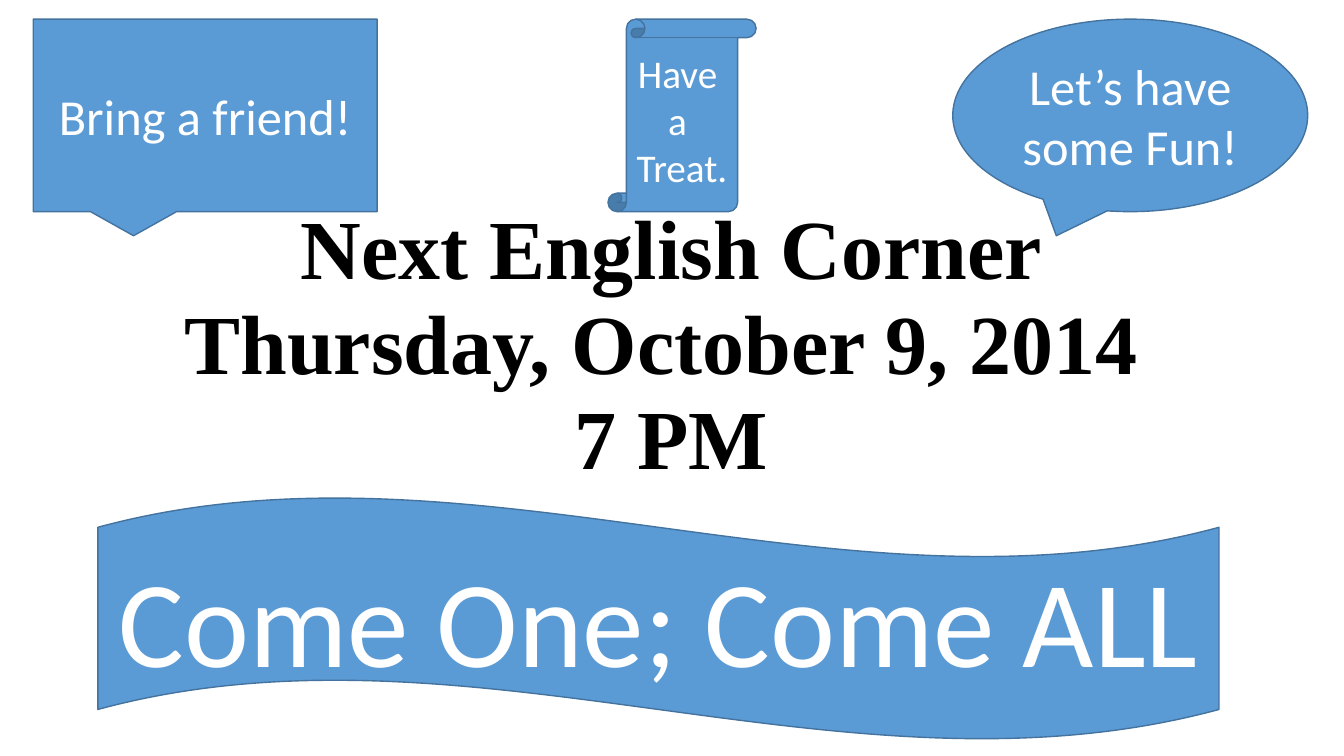
from pptx import Presentation
from pptx.dml.color import RGBColor
from pptx.enum import shapes, text
from pptx.util import Inches, Pt

BLUE = RGBColor(0x5B, 0x9B, 0xD5)
EDGE = RGBColor(0x43, 0x73, 0x9E)
WHITE = RGBColor(0xFF, 0xFF, 0xFF)
BLACK = RGBColor(0, 0, 0)
KIND = shapes.MSO_SHAPE


def write(frame, lines, font, space=1.0):
    """Fill a frame with centred lines in one font format."""
    frame.word_wrap = True
    frame.vertical_anchor = text.MSO_ANCHOR.MIDDLE
    for i, line in enumerate(lines):
        para = frame.paragraphs[0] if i == 0 else frame.add_paragraph()
        para.alignment = text.PP_ALIGN.CENTER
        para.line_spacing = space
        run = para.add_run()
        run.text = line
        run.font.color.rgb = font["color"]
        for key in ("name", "size", "bold"):
            setattr(run.font, key, font[key])


def badge(slide, kind, box, lines, size):
    """Blue shape with white text."""
    shape = slide.shapes.add_shape(kind, *map(Inches, box))
    shape.shadow.inherit = False
    shape.fill.solid()
    shape.fill.fore_color.rgb = BLUE
    shape.line.color.rgb = EDGE
    shape.line.width = Pt(1)
    font = {"name": "Calibri", "size": Pt(size), "bold": False, "color": WHITE}
    write(shape.text_frame, lines, font)


def title(slide, box, lines):
    """Date and time of the event."""
    area = slide.shapes.add_textbox(*map(Inches, box))
    font = {"name": "Times New Roman", "size": Pt(60), "bold": True,
            "color": BLACK}
    write(area.text_frame, lines, font, 0.94)


def header(slide, top, high):
    """Callouts and scroll, side by side."""
    parts = [
        (KIND.OVAL_CALLOUT, 9.45, 3.52, ["Let’s have some Fun!"], 36),
        (KIND.RECTANGULAR_CALLOUT, 0.33, 3.41, ["Bring a friend!"], 36),
        (KIND.VERTICAL_SCROLL, 6.03, 1.47, ["Have ", "a ", "Treat."], 28),
    ]
    for kind, left, wide, lines, size in parts:
        badge(slide, kind, (left, top, wide, high), lines, size)


def main():
    deck = Presentation()
    deck.slide_width, deck.slide_height = Inches(13.33), Inches(7.5)
    slide = deck.slides.add_slide(deck.slide_layouts[6])
    title(slide, (0.91, 2.09, 11.5, 2.69),
          ["Next English Corner", "Thursday, October 9, 2014 ", "7 PM"])
    header(slide, 0.19, 1.91)
    # Closing banner
    badge(slide, KIND.WAVE, (0.97, 4.93, 11.12, 2.41),
          ["Come One; Come ALL"], 88)
    deck.save("out.pptx")


if __name__ == "__main__":
    main()
